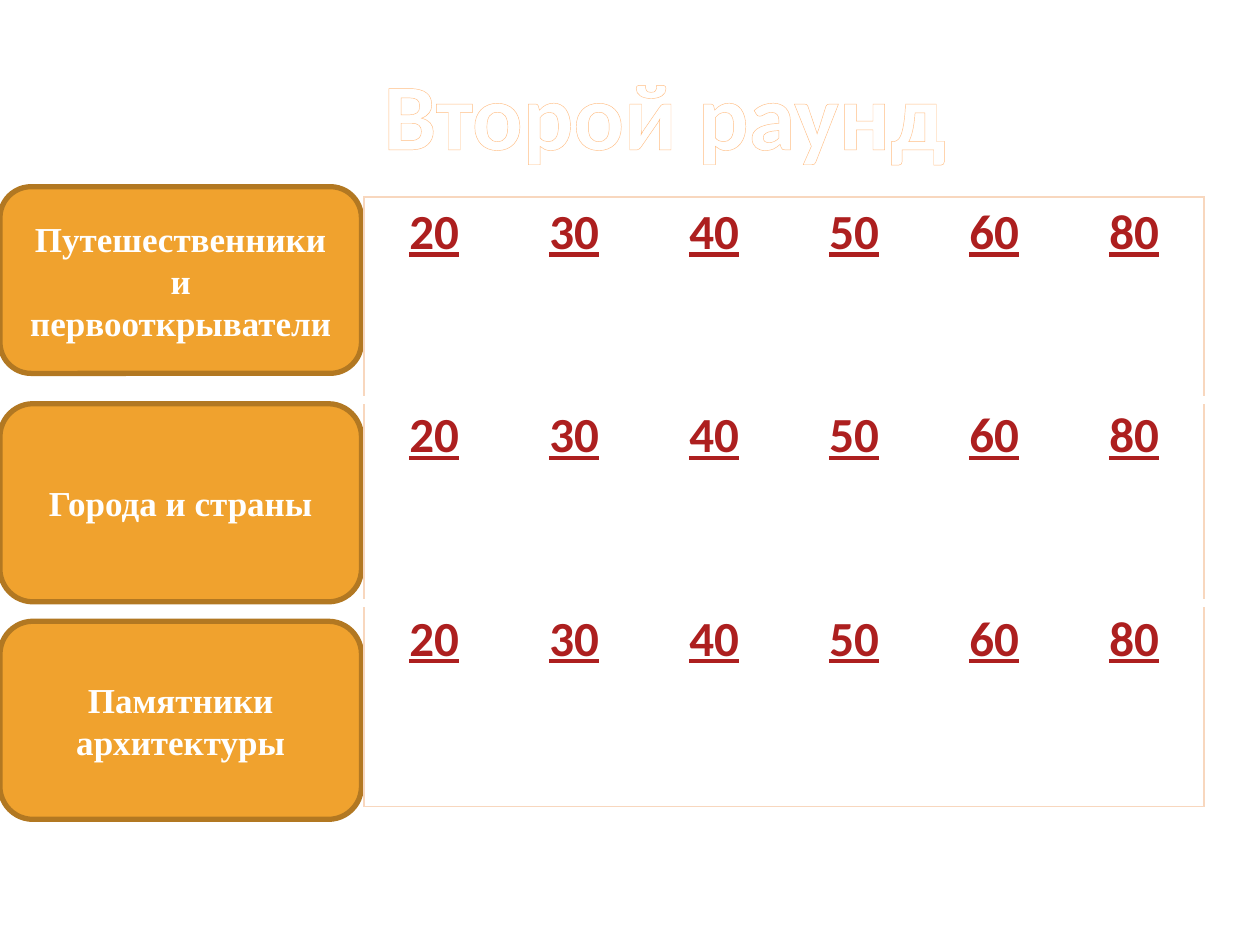
from dataclasses import dataclass

import pptx
import pptx.dml.color
import pptx.enum.shapes
import pptx.enum.text
import pptx.oxml
import pptx.oxml.ns
import pptx.util
from pptx.util import Pt

RGBColor = pptx.dml.color.RGBColor
WHITE = RGBColor(0xFF, 0xFF, 0xFF)
ORANGE = RGBColor(0xF0, 0xA2, 0x2E)
BROWN = RGBColor(0xB2, 0x78, 0x22)
RED = RGBColor(0xAD, 0x1F, 0x1F)
PEACH = RGBColor(0xF8, 0xD7, 0xBE)
TITLE_OUTLINE = RGBColor(0xFF, 0xBE, 0x84)

TITLE_FONT = {"name": "Calibri", "size": Pt(54), "bold": True}
TOPIC_FONT = {"name": "Times New Roman", "size": Pt(20), "bold": True}
SCORE_FONT = {"name": "Calibri", "size": Pt(28), "bold": True, "underline": True}

NO_STYLE_NO_GRID = "{2D5ABB26-0587-4C30-8999-92F81FD0307C}"
SCORES = ("20", "30", "40", "50", "60", "80")


@dataclass(frozen=True)
class Topic:
    name: str
    top: float
    height: float


TOPICS = (
    Topic("Путешественники и первооткрыватели", 106.7, 106.7),
    Topic("Города и страны", 230.7, 113.2),
    Topic("Памятники архитектуры", 355, 113.2),
)


def write(frame, text: str, font_format: dict, color: RGBColor):
    """Fill the frame with one centred run and return the run."""
    paragraph = frame.paragraphs[0]
    paragraph.alignment = pptx.enum.text.PP_ALIGN.CENTER
    run = paragraph.add_run()
    run.text = text
    for attribute, value in font_format.items():
        setattr(run.font, attribute, value)
    run.font.color.rgb = color
    return run


def solid_line(tag: str, color: RGBColor, width: float):
    return pptx.oxml.parse_xml(
        f'<a:{tag} {pptx.oxml.ns.nsdecls("a")} w="{Pt(width)}">'
        f'<a:solidFill><a:srgbClr val="{color}"/></a:solidFill></a:{tag}>'
    )


def draw_title(slide) -> None:
    title = slide.shapes.add_textbox(Pt(95.8), Pt(28.1), Pt(568), Pt(138.2))
    title.text_frame.word_wrap = True
    run = write(title.text_frame, "Второй раунд", TITLE_FONT, WHITE)
    run.font._element.insert(0, solid_line("ln", TITLE_OUTLINE, 2.48))


def draw_topic(slide, topic: Topic) -> None:
    card = slide.shapes.add_shape(
        pptx.enum.shapes.MSO_SHAPE.ROUNDED_RECTANGLE,
        Pt(0), Pt(topic.top), Pt(206.6), Pt(topic.height),
    )
    card.shadow.inherit = False
    card.fill.solid()
    card.fill.fore_color.rgb = ORANGE
    card.line.color.rgb = BROWN
    card.line.width = Pt(3)
    card.text_frame.word_wrap = True
    card.text_frame.vertical_anchor = pptx.enum.text.MSO_ANCHOR.MIDDLE
    write(card.text_frame, topic.name, TOPIC_FONT, WHITE)


def border_cell(cell, row: int, column: int) -> None:
    """Frame the outside of the board and part the first row with white."""
    last_row, last_column = len(TOPICS) - 1, len(SCORES) - 1
    borders = (
        ("lnL", column == 0, PEACH, 1),
        ("lnR", column == last_column, PEACH, 1),
        ("lnT", row == 0, PEACH, 1),
        ("lnT", row == 1, WHITE, 5),
        ("lnB", row == 0, WHITE, 5),
        ("lnB", row == last_row, PEACH, 1),
    )
    properties = cell._tc.get_or_add_tcPr()
    for tag, applies, color, width in borders:
        if applies:
            properties.append(solid_line(tag, color, width))


def fill_cell(cell, row: int) -> None:
    if row != 1:
        cell.fill.background()
        return
    cell.fill.solid()
    cell.fill.fore_color.rgb = WHITE
    color = cell._tc.tcPr.find(".//" + pptx.oxml.ns.qn("a:srgbClr"))
    color.append(pptx.oxml.parse_xml(
        f'<a:alpha {pptx.oxml.ns.nsdecls("a")} val="20000"/>'
    ))


def draw_board(slide) -> None:
    column_width, row_height = Pt(80), Pt(116.1)
    board = slide.shapes.add_table(
        len(TOPICS), len(SCORES), Pt(208.1), Pt(112.5),
        column_width * len(SCORES), row_height * len(TOPICS),
    ).table
    board.first_row = board.horz_banding = False
    style = board._tbl.tblPr.find(pptx.oxml.ns.qn("a:tableStyleId"))
    style.text = NO_STYLE_NO_GRID
    for row in range(len(TOPICS)):
        for column, score in enumerate(SCORES):
            cell = board.cell(row, column)
            write(cell.text_frame, score, SCORE_FONT, RED)
            border_cell(cell, row, column)
            fill_cell(cell, row)


def main() -> None:
    deck = pptx.Presentation()
    deck.slide_width, deck.slide_height = Pt(720), Pt(540)
    slide = deck.slides.add_slide(deck.slide_layouts[6])
    draw_title(slide)
    for topic in TOPICS:
        draw_topic(slide, topic)
    draw_board(slide)
    deck.save("out.pptx")


if __name__ == "__main__":
    main()
